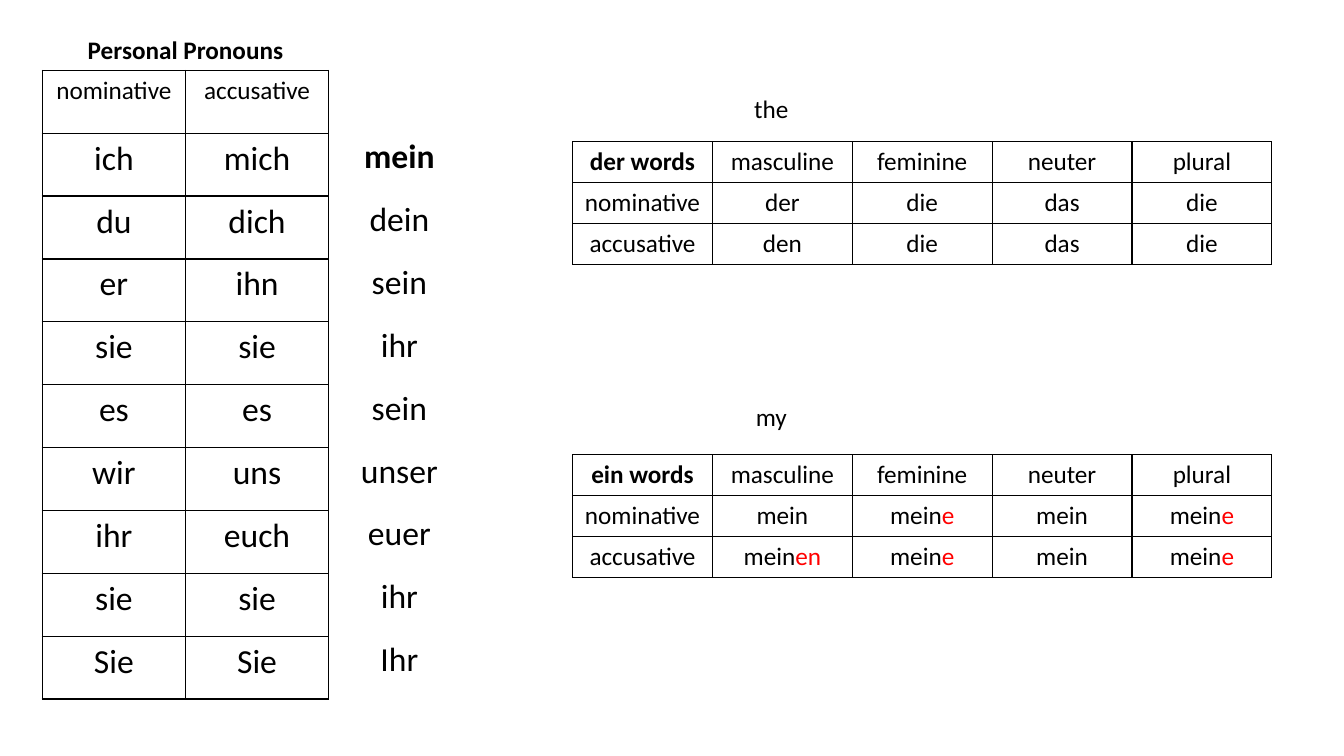
from dataclasses import dataclass

from lxml.etree import SubElement
from pptx import Presentation
from pptx.dml.color import RGBColor
from pptx.enum.text import MSO_AUTO_SIZE, PP_ALIGN
from pptx.oxml.ns import qn
from pptx.util import Pt


@dataclass(frozen=True)
class Theme:
    font: str = "Calibri"
    ink: RGBColor = RGBColor(0, 0, 0)
    ending: RGBColor = RGBColor(255, 0, 0)
    label: int = 18
    pronoun: int = 24
    rule: int = 1


THEME = Theme()

PRONOUNS = [
    ("nominative", "accusative"),
    ("ich", "mich"),
    ("du", "dich"),
    ("er", "ihn"),
    ("sie", "sie"),
    ("es", "es"),
    ("wir", "uns"),
    ("ihr", "euch"),
    ("sie", "sie"),
    ("Sie", "Sie"),
]
POSSESSIVES = ["mein", "dein", "sein", "ihr", "sein", "unser", "euer", "ihr", "Ihr"]
GENDERS = ("masculine", "feminine", "neuter", "plural")
# A bar sets off the ending that is shown in colour.
DER_WORDS = [
    ("der words", *GENDERS),
    ("nominative", "der", "die", "das", "die"),
    ("accusative", "den", "die", "das", "die"),
]
EIN_WORDS = [
    ("ein words", *GENDERS),
    ("nominative", "mein", "mein|e", "mein", "mein|e"),
    ("accusative", "mein|en", "mein|e", "mein", "mein|e"),
]


def write(frame, text, size, bold=False):
    """Write one centred line, with the part after a bar in the ending colour."""
    line = frame.paragraphs[0]
    line.alignment = PP_ALIGN.CENTER
    line.font.name = THEME.font
    line.font.size = Pt(size)
    line.font.bold = bold
    line.font.color.rgb = THEME.ink
    stem, _, ending = text.partition("|")
    line.add_run().text = stem
    if ending:
        ending_run = line.add_run()
        ending_run.text = ending
        ending_run.font.color.rgb = THEME.ending


def rule_cell(cell, ruled):
    """Give a cell black borders, or none, and no fill."""
    properties = cell._tc.get_or_add_tcPr()
    for side in ("lnL", "lnR", "lnT", "lnB"):
        border = SubElement(properties, qn(f"a:{side}"), w=str(Pt(THEME.rule)))
        if ruled:
            fill = SubElement(border, qn("a:solidFill"))
            SubElement(fill, qn("a:srgbClr"), val=str(THEME.ink))
        else:
            SubElement(border, qn("a:noFill"))
    cell.fill.background()


def add_grid(slide, box, rows, size, header_size, bold_corner=False, ruled=True):
    """Fill the box with a table of equal rows and equal columns."""
    left, top, width, height = box
    column_count = len(rows[0])
    grid = slide.shapes.add_table(
        len(rows), column_count, Pt(left), Pt(top), Pt(width), Pt(height)
    ).table
    grid.first_row = grid.horz_banding = False
    for column in grid.columns:
        column.width = Pt(width / column_count)
    for r, words in enumerate(rows):
        grid.rows[r].height = Pt(height / len(rows))
        for c, word in enumerate(words):
            cell = grid.cell(r, c)
            rule_cell(cell, ruled)
            write(cell.text_frame, word, size if r else header_size,
                  bold=bold_corner and r == c == 0)


def add_caption(slide, box, text, bold=False):
    caption = slide.shapes.add_textbox(*map(Pt, box)).text_frame
    caption.word_wrap = True
    caption.auto_size = MSO_AUTO_SIZE.SHAPE_TO_FIT_TEXT
    write(caption, text, THEME.label, bold)


def add_pronouns(slide, box):
    """Place the pronoun table, its title above and the possessives beside it."""
    left, top, width, height = box
    row_height = height / len(PRONOUNS)
    add_grid(slide, box, PRONOUNS, THEME.pronoun, THEME.label)
    add_caption(slide, (left + 3, top - 29.5, width - 6, 29), "Personal Pronouns", True)
    beside = (left + width + 5, top + row_height - 1, 91, row_height * len(POSSESSIVES))
    add_grid(slide, beside, [(word,) for word in POSSESSIVES],
             THEME.pronoun, THEME.pronoun, bold_corner=True, ruled=False)


def add_declension(slide, box, meaning, rows, rise):
    """Place a declension table with its English meaning a given rise above it."""
    left, top, _, _ = box
    add_grid(slide, box, rows, THEME.label, THEME.label, bold_corner=True)
    add_caption(slide, (left + 42.5, top - rise, 199, 29), meaning)


def main():
    deck = Presentation()
    deck.slide_width, deck.slide_height = Pt(960), Pt(540)
    slide = deck.slides.add_slide(deck.slide_layouts[6])
    add_pronouns(slide, (30.25, 50.25, 204.5, 449.25))
    add_declension(slide, (409, 101.25, 499.5, 87.75), "the", DER_WORDS, 38.5)
    add_declension(slide, (409, 324.75, 499.5, 87.75), "my", EIN_WORDS, 41.75)
    deck.save("out.pptx")


if __name__ == "__main__":
    main()
